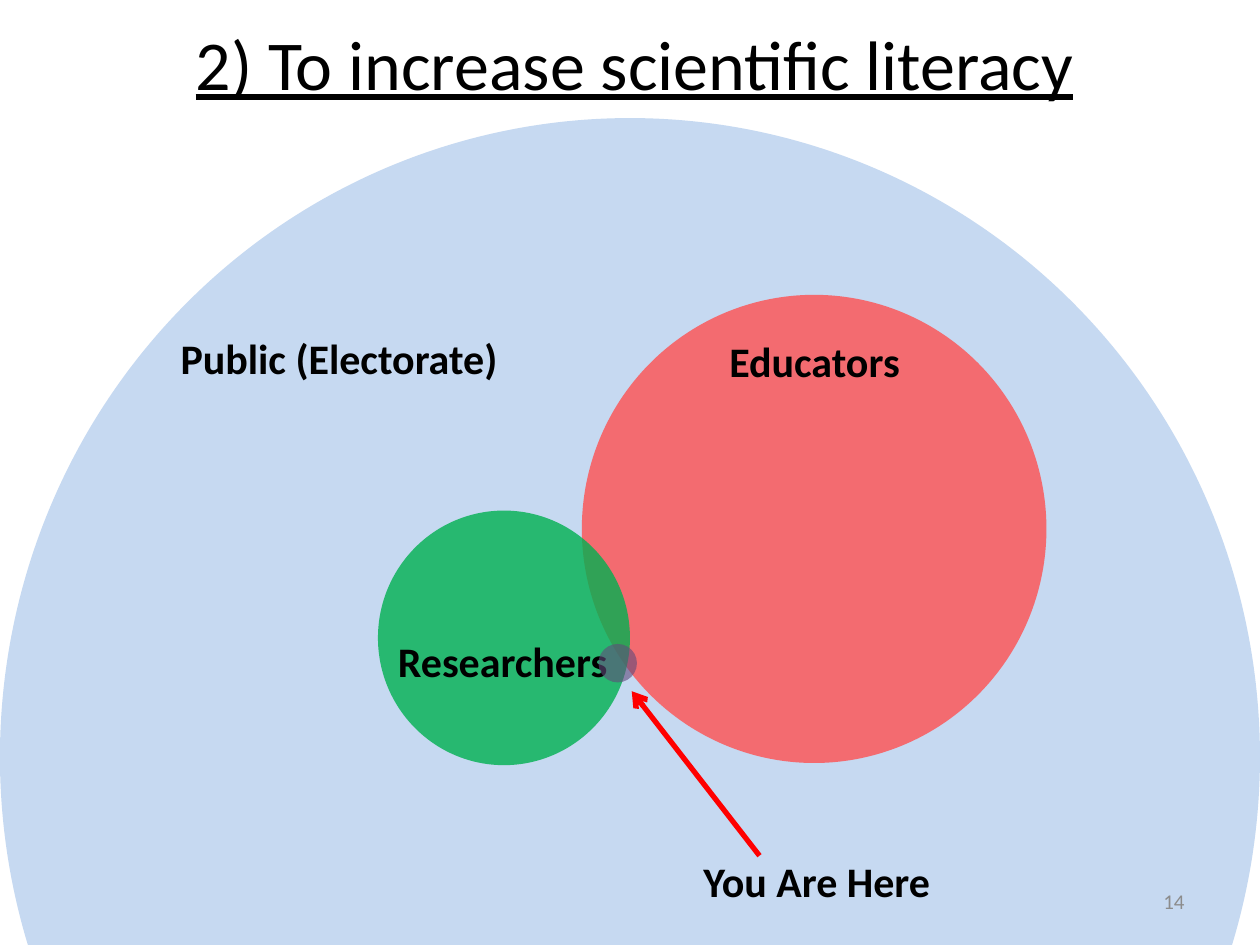
import pptx
import pptx.util
import pptx.dml.color
import pptx.enum.shapes
import pptx.enum.text
import pptx.oxml.ns
from lxml import etree

Pt = pptx.util.Pt
ALIGN = pptx.enum.text.PP_ALIGN
ANCHOR = pptx.enum.text.MSO_ANCHOR
qn = pptx.oxml.ns.qn

# Content: lengths in points, boxes as left, top, width, height
COLORS = {
    "text": "000000", "number": "8C8C8C", "arrow": "FF0000",
    "public": "C6D9F1", "educators": "FF5050",
    "researchers": "00B050", "you": "604A7B",
}
FONT = "Calibri"
TITLE = ("2) To increase scientific literacy", (31, 8, 658, 55.5))
NUMBER = ("14", (516, 500.5, 168, 28.75))
# Back to front: colour, opacity in percent, circle box, label, label box
GROUPS = [
    ("public", 100, (0, 67.5, 720, 730), "Public (Electorate)", (95, 186.5, 197.5, 36)),
    ("educators", 80, (332.5, 168.5, 265.5, 267.5), "Educators", (409, 188, 113, 36)),
    ("researchers", 80, (216, 291.75, 144, 145.5), "Researchers", (219.5, 359.5, 135.5, 36)),
    ("you", 60, (342, 368, 22, 22), "You Are Here", (394, 485.25, 145.5, 36)),
]
ARROW = (434, 489, 361, 395)


def rgb(name):
    return pptx.dml.color.RGBColor.from_string(COLORS[name])


def add_text(text, box, size, align, color="text", bold=False, wrap=True,
             anchor=ANCHOR.TOP):
    tf = s.shapes.add_textbox(*map(Pt, box)).text_frame
    tf.word_wrap = wrap
    tf.vertical_anchor = anchor
    p = tf.paragraphs[0]
    p.alignment = align
    r = p.add_run()
    r.text = text
    r.font.name, r.font.size, r.font.bold = FONT, Pt(size), bold
    r.font.color.rgb = rgb(color)
    return p


def add_circle(color, opacity, box):
    sp = s.shapes.add_shape(pptx.enum.shapes.MSO_SHAPE.OVAL, *map(Pt, box))
    sp.shadow.inherit = False
    sp.line.fill.background()
    sp.fill.solid()
    sp.fill.fore_color.rgb = rgb(color)
    if opacity < 100:
        clr = sp.fill._xPr.find(qn("a:solidFill"))[0]
        etree.SubElement(clr, qn("a:alpha"), val=str(opacity * 1000))


prs = pptx.Presentation()
prs.slide_width, prs.slide_height = Pt(720), Pt(540)
s = prs.slides.add_slide(prs.slide_layouts[6])

# Title with hanging indent
p = add_text(*TITLE, 40, ALIGN.CENTER)
p.runs[0].font.underline = True
pPr = p._p.get_or_add_pPr()
pPr.set("marL", str(Pt(32)))
pPr.set("indent", str(-Pt(27)))

# Nested and overlapping circles with labels
for color, opacity, circle, label, box in GROUPS:
    add_circle(color, opacity, circle)
    add_text(label, box, 24, ALIGN.CENTER, bold=True, wrap=False)

# Arrow from the last label to the smallest circle
line = s.shapes.add_connector(pptx.enum.shapes.MSO_CONNECTOR.STRAIGHT, *map(Pt, ARROW))
line.line.color.rgb = rgb("arrow")
line.line.width = Pt(3)
etree.SubElement(line.line._get_or_add_ln(), qn("a:tailEnd"), type="arrow")
etree.SubElement(line._element.spPr, qn("a:effectLst"))

# Slide number
add_text(*NUMBER, 12, ALIGN.RIGHT, color="number", anchor=ANCHOR.MIDDLE)

prs.save("out.pptx")
